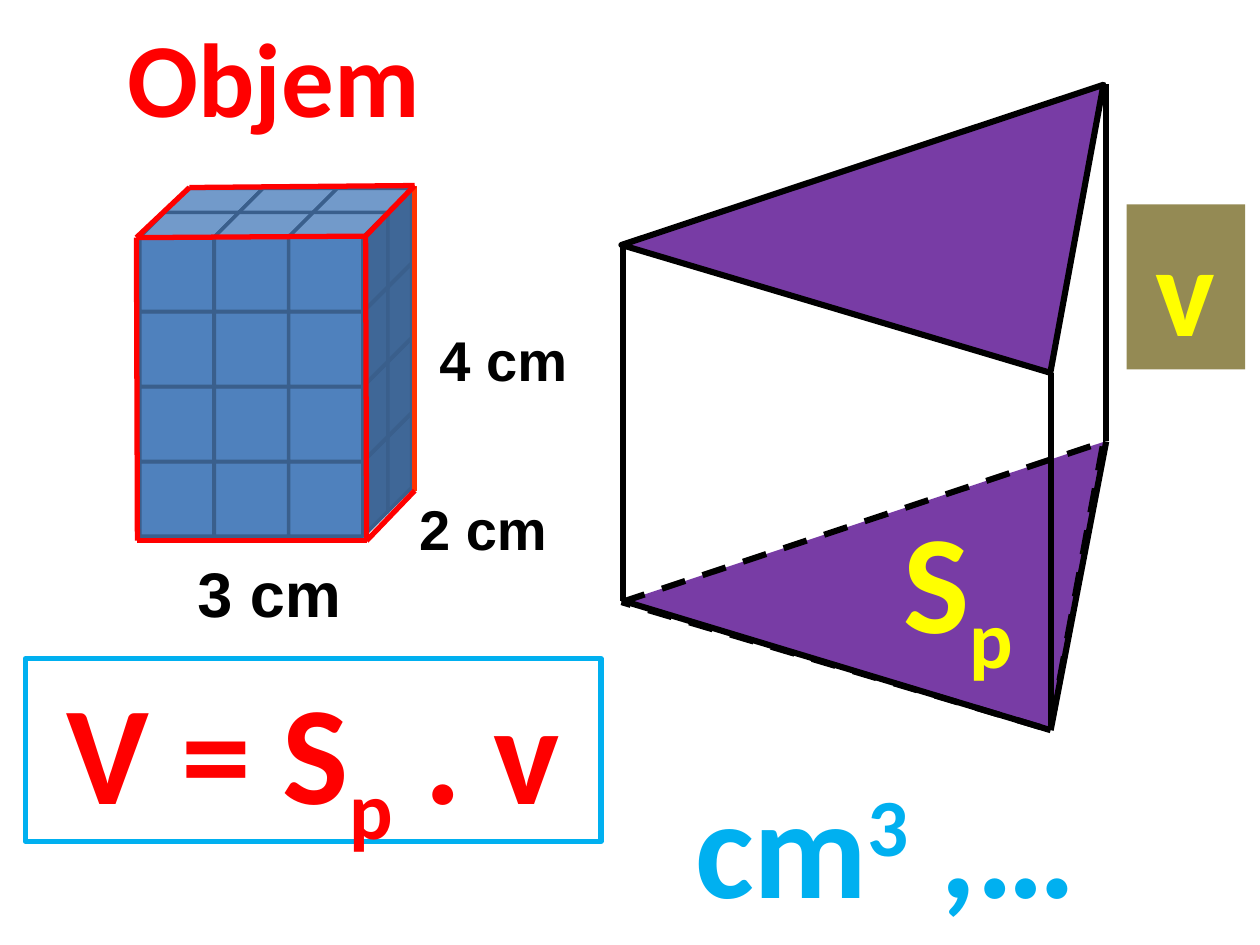
import pptx
import pptx.util
import pptx.dml.color
import pptx.enum.dml
import pptx.enum.shapes
import pptx.enum.text
import pptx.oxml
import pptx.oxml.ns
from pptx.util import Cm

RGBColor = pptx.dml.color.RGBColor
SHAPE = pptx.enum.shapes.MSO_SHAPE
ALIGN = pptx.enum.text.PP_ALIGN

RED = RGBColor(0xFF, 0x00, 0x00)
ORANGE = RGBColor(0xFF, 0x33, 0x00)
BLACK = RGBColor(0x00, 0x00, 0x00)
PURPLE = RGBColor(0x70, 0x30, 0xA0)
BLUE = RGBColor(0x4F, 0x81, 0xBD)
DARK_BLUE = RGBColor(0x3A, 0x5F, 0x8C)
SKY = RGBColor(0x00, 0xB0, 0xF0)
YELLOW = RGBColor(0xFF, 0xFF, 0x00)
OLIVE = RGBColor(0x94, 0x8A, 0x54)


def write(sp, runs, size, color, font="Calibri", align=ALIGN.CENTER, wrap=True):
    tf = sp.text_frame
    tf.word_wrap = wrap
    tf.vertical_anchor = pptx.enum.text.MSO_ANCHOR.TOP
    p = tf.paragraphs[0]
    p.alignment = align
    for text, baseline in runs:
        r = p.add_run()
        r.text = text
        r.font.name = font
        r.font.size = pptx.util.Pt(size)
        r.font.bold = True
        r.font.color.rgb = color
        if baseline:
            r.font._element.set("baseline", str(baseline * 1000))


def add_text(s, left, top, width, height, *args, **kwargs):
    sp = s.shapes.add_textbox(Cm(left), Cm(top), Cm(width), Cm(height))
    write(sp, *args, **kwargs)


def add_shape(s, kind, left, top, width, height, fill=None, line=None, weight=1):
    sp = s.shapes.add_shape(kind, Cm(left), Cm(top), Cm(width), Cm(height))
    sp.shadow.inherit = False
    if fill is None:
        sp.fill.background()
    else:
        sp.fill.solid()
        sp.fill.fore_color.rgb = fill
    if line is None:
        sp.line.fill.background()
    else:
        sp.line.color.rgb = line
        sp.line.width = pptx.util.Pt(weight)
    return sp


def add_edge(s, left, top, start, end, color, weight):
    c = s.shapes.add_connector(
        pptx.enum.shapes.MSO_CONNECTOR.STRAIGHT,
        Cm(left + start[0]), Cm(top + start[1]), Cm(left + end[0]), Cm(top + end[1]))
    c.line.color.rgb = color
    c.line.width = pptx.util.Pt(weight)
    c._element.spPr.append(pptx.oxml.parse_xml(
        "<a:effectLst %s/>" % pptx.oxml.ns.nsdecls("a")))


def add_title(s, left, top, width, height):
    sp = s.shapes.title
    sp.left, sp.top, sp.width, sp.height = Cm(left), Cm(top), Cm(width), Cm(height)
    sp.text_frame.margin_left = Cm(1.68)
    write(sp, [("Objem", 0)], 60, RED, align=ALIGN.LEFT)


def add_cuboid(s, left, top):
    size, step = 2.0, 1.5
    for row in reversed(range(4)):
        for dx, dy in ((0.58, 0.06), (0.1, 0.54)):
            for col in range(3):
                add_shape(s, SHAPE.CUBE, left + dx + col * step,
                          top + dy + row * 1.51, size, size, BLUE, DARK_BLUE, 2)

    front_top_left, front_top_right = (0.03, 1.05), (4.65, 1.02)
    front_low_left, front_low_right = (0.05, 7.16), (4.67, 7.16)
    back_top_left, back_top_right, back_low_right = (1.1, 0.04), (5.64, 0), (5.64, 6.15)
    for start, end, color in (
            (back_top_right, back_low_right, ORANGE),
            (front_low_right, back_low_right, RED),
            (front_low_left, front_top_left, RED),
            (front_low_right, front_top_right, RED),
            (front_top_left, front_top_right, RED),
            (back_top_left, back_top_right, RED),
            (front_top_left, back_top_left, RED),
            (front_top_right, back_top_right, RED),
            (front_low_left, front_low_right, RED)):
        add_edge(s, left, top, start, end, color, 3)

    for text, dx, dy, width, height, pt in (
            ("3 cm", 1.01, 7.32, 3.43, 1.8, 36),
            ("2 cm", 5.48, 6.1, 3.1, 1.63, 32),
            ("4 cm", 5.89, 2.7, 3.1, 1.63, 32)):
        add_text(s, left + dx, top + dy, width, height, [(text, 0)], pt, BLACK,
                 font="Arial", align=ALIGN.LEFT, wrap=False)


def add_prism(s, left, top, height):
    for dy in (0, height):
        sp = add_shape(s, SHAPE.ISOSCELES_TRIANGLE, left + 0.63, top + dy - 1.22,
                       9.02, 5.87, PURPLE, BLACK, 3.5)
        sp.adjustments[0] = 0.93
        sp.rotation = 16.6
        clr = sp.fill._xPr.find(".//" + pptx.oxml.ns.qn("a:srgbClr"))
        clr.append(pptx.oxml.parse_xml(
            '<a:alpha %s val="94000"/>' % pptx.oxml.ns.nsdecls("a")))
    sp.line.dash_style = pptx.enum.dml.MSO_LINE.DASH

    corners = [(0, 3.21), (8.63, 5.82), (9.75, 0)]
    base = [(x, y + height) for x, y in corners]
    edges = list(zip(corners, base)) + list(zip(base, base[1:]))
    for start, end in edges:
        add_edge(s, left, top, start, end, BLACK, 3.5)

    add_text(s, left + 3.27, top + 8.13, 7.01, 3.68,
             [("S", 0), ("p", -25)], 80, YELLOW)
    sp = add_shape(s, SHAPE.RECTANGLE, left + 10.16, top + 2.42, 2.39, 3.33, OLIVE)
    write(sp, [("v", 0)], 72, YELLOW)


def add_formula(s, left, top, width, height):
    sp = add_shape(s, SHAPE.RECTANGLE, left, top, width, height, line=SKY, weight=3)
    write(sp, [("V = S", 0), ("p", -25), (" . v", 0)], 80, RED)


def add_units(s, left, top, width, height):
    add_text(s, left, top, width, height,
             [("cm", 0), ("3", 30), (" ,…", 0)], 80, SKY)


def main():
    prs = pptx.Presentation()
    prs.slide_width, prs.slide_height = Cm(25.4), Cm(19.05)
    s = prs.slides.add_slide(prs.slide_layouts[5])
    add_title(s, 0.89, 0.13, 9.42, 2.82)
    add_cuboid(s, 2.72, 3.74)
    add_formula(s, 0.51, 13.28, 11.61, 3.68)
    add_units(s, 12.5, 15.16, 10.72, 3.68)
    add_prism(s, 12.55, 1.7, 7.2)
    prs.save("out.pptx")


if __name__ == "__main__":
    main()
